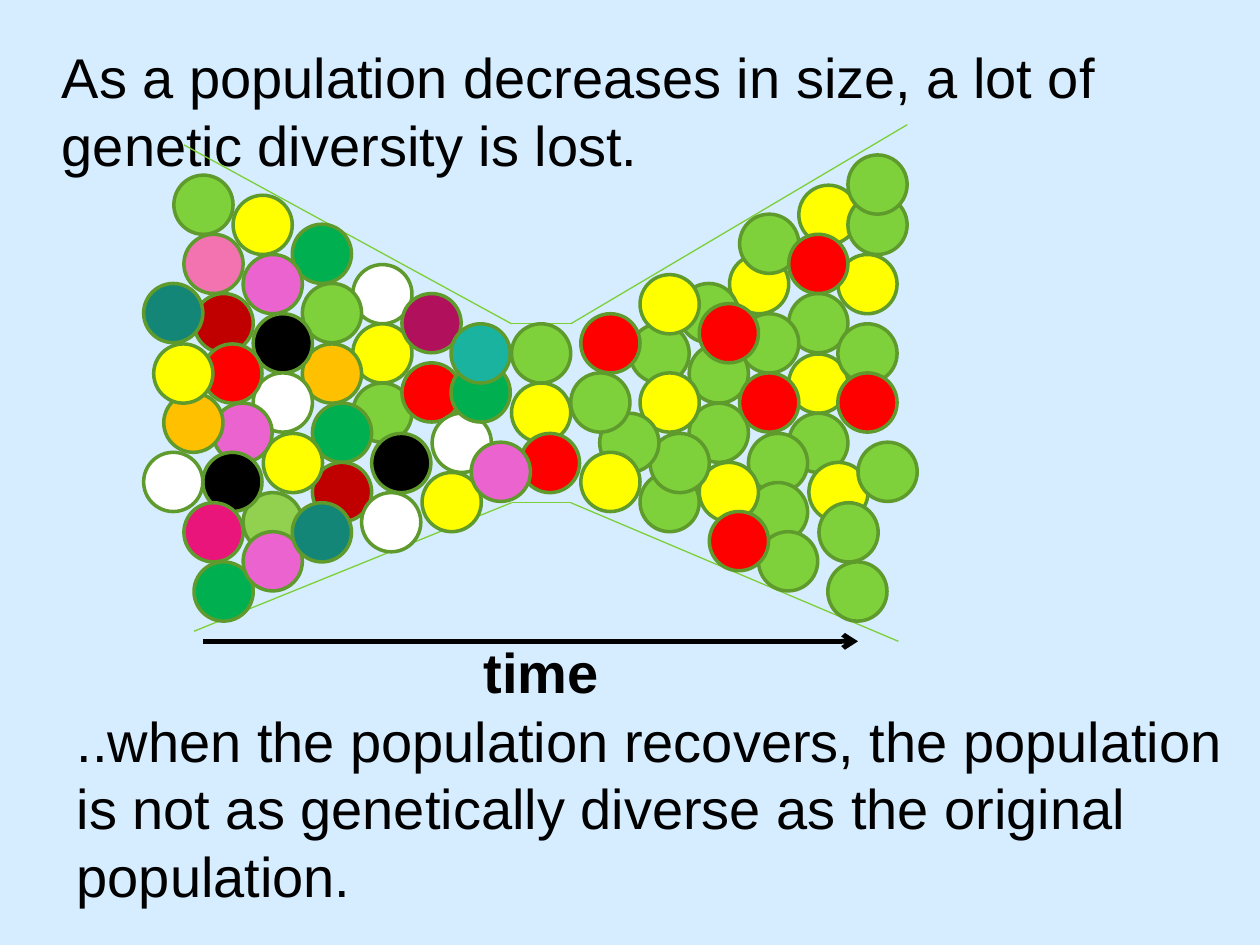
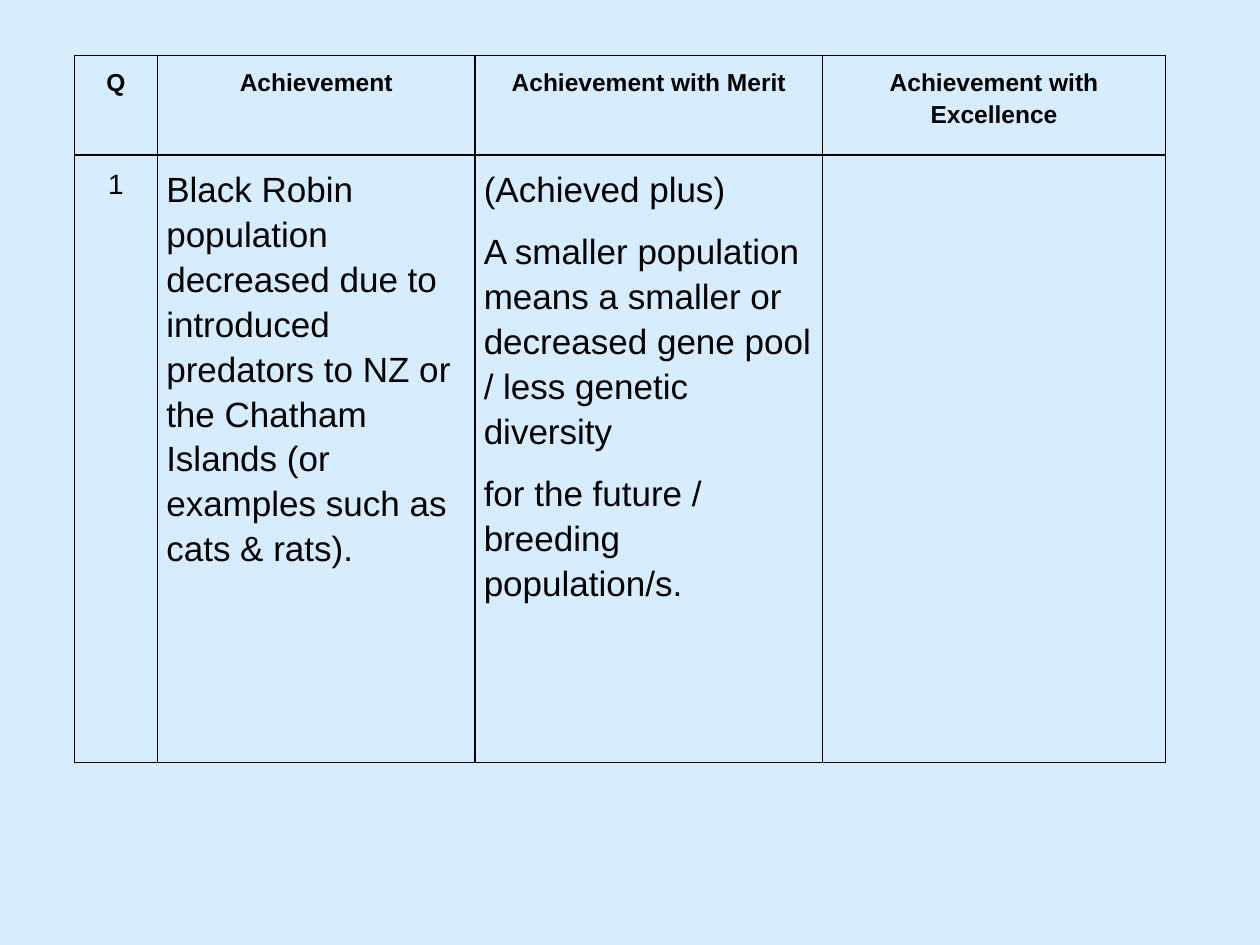
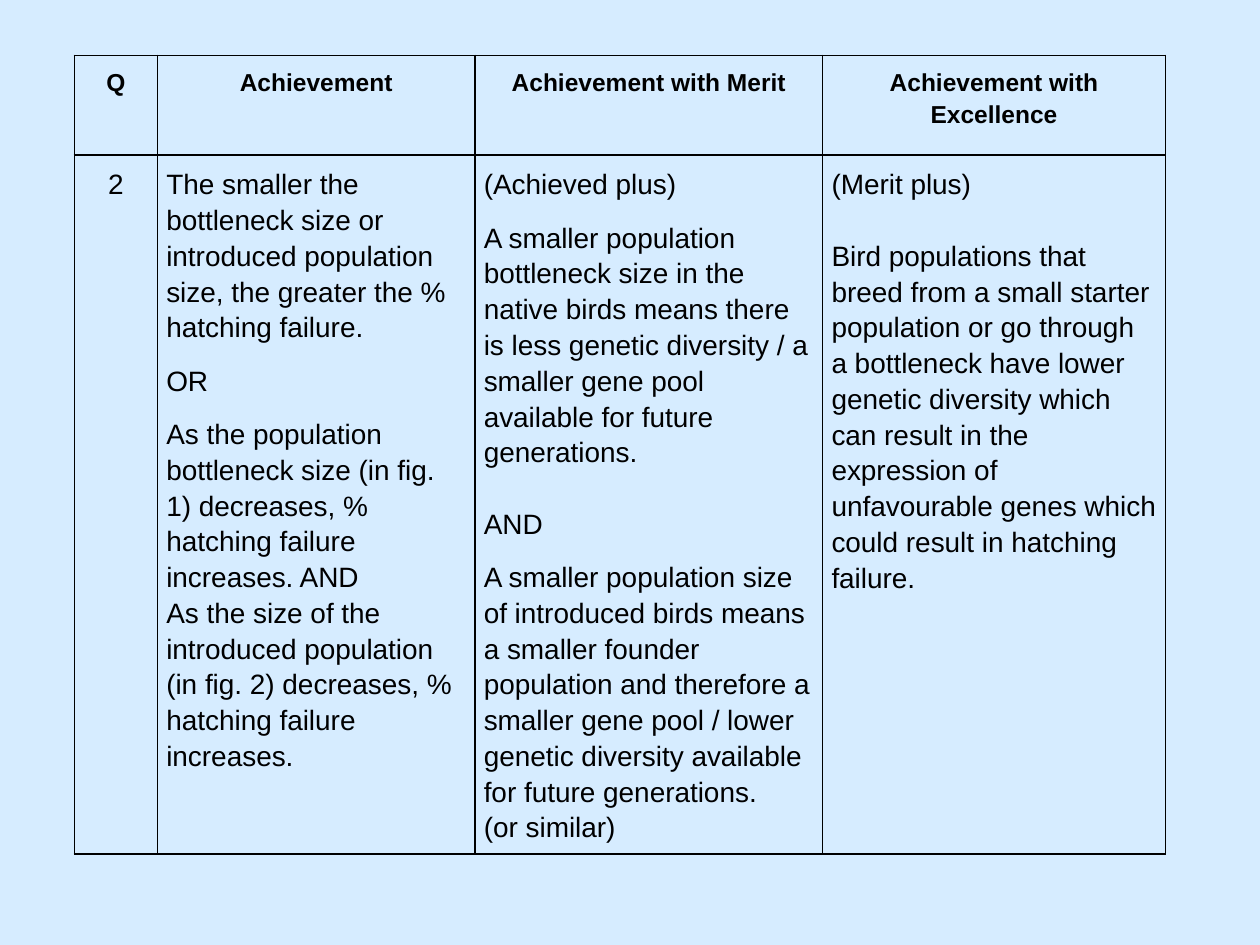
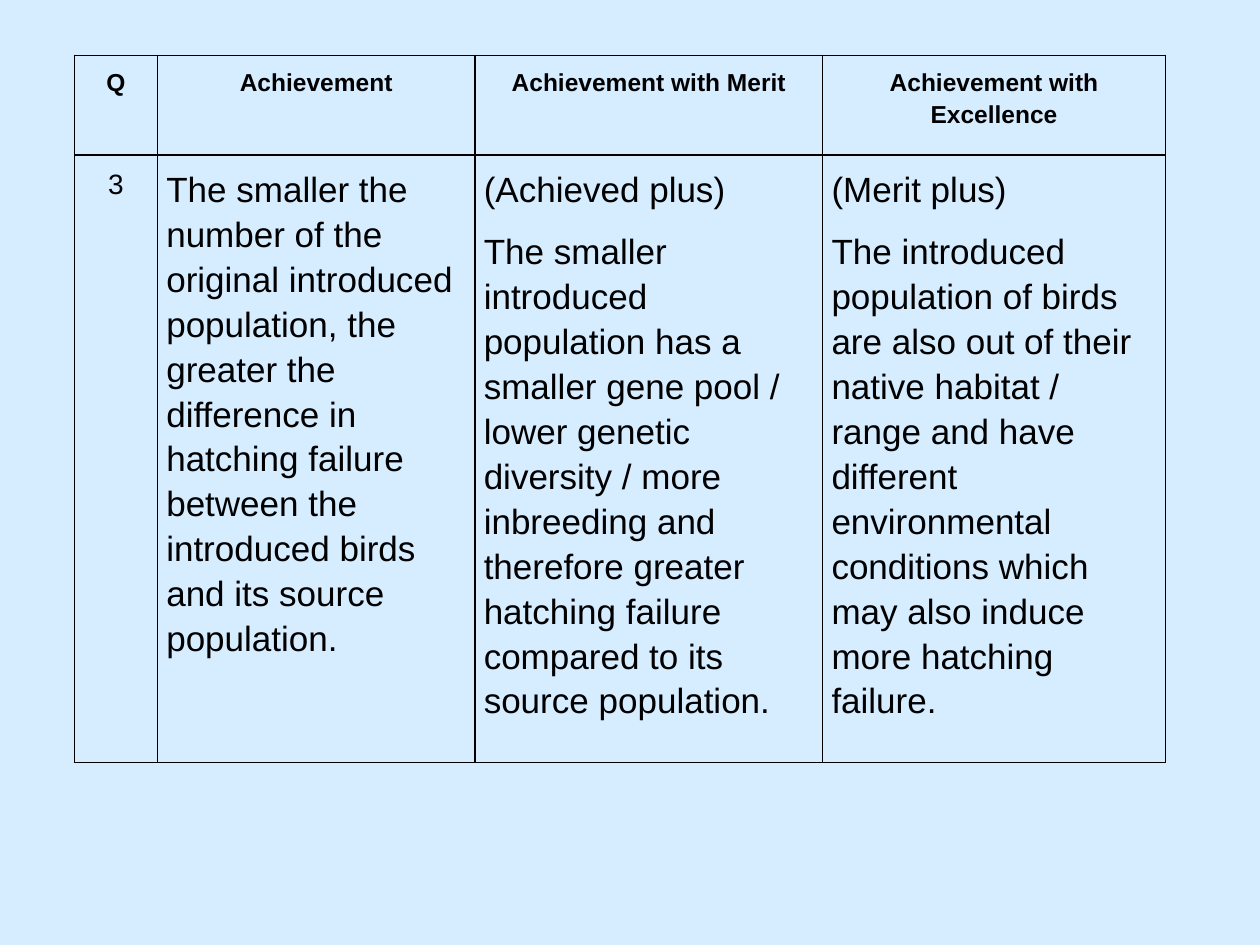
import pptx
import pptx.dml.color
import pptx.enum.shapes
import pptx.enum.text
import pptx.util
from lxml import etree
from pptx.oxml.ns import qn

Inches = pptx.util.Inches
Pt = pptx.util.Pt
ALIGN = pptx.enum.text.PP_ALIGN
SHAPE = pptx.enum.shapes.MSO_SHAPE
STRAIGHT = pptx.enum.shapes.MSO_CONNECTOR.STRAIGHT


def colour(value):
    return pptx.dml.color.RGBColor.from_string(value)


def write(para, text, size, bold=False, layout=None):
    """Fill a paragraph with black Arial text; layout holds paragraph values."""
    para.text = text
    for name, value in (layout or {}).items():
        setattr(para, name, value)
    for span in para.runs:
        for name, value in {"name": "Arial", "size": Pt(size), "bold": bold}.items():
            setattr(span.font, name, value)
        span.font.color.rgb = colour("000000")


# Shared look
deck = pptx.Presentation()
deck.slide_width, deck.slide_height = Inches(10), Inches(7.5)
background = deck.slide_master.background.fill
background.solid()
background.fore_color.rgb = colour("D6ECFF")
title_only, blank = deck.slide_layouts[5], deck.slide_layouts[6]

# Slide 1: population bottleneck
page = deck.slides.add_slide(title_only)

# Funnel outline and time arrow
upper_edge = [(1.46, 1.15), (4.06, 2.57), (4.53, 2.57), (7.2, 0.99)]
lower_edge = [(1.54, 5.01), (4.06, 3.99), (4.53, 3.99), (7.13, 5.09)]
time_axis = [(1.61, 5.09), (6.81, 5.09)]
for points, line_colour, weight in [(upper_edge, "7CD036", 0.75),
                                    (lower_edge, "7CD036", 0.75),
                                    (time_axis, "000000", 2.75)]:
    for start, end in zip(points, points[1:]):
        line = page.shapes.add_connector(STRAIGHT, *map(Inches, start + end))
        line.line.color.rgb = colour(line_colour)
        line.line.width = Pt(weight)
        properties = line._element.spPr
        etree.SubElement(properties, qn("a:effectLst"))
        if points is time_axis:
            etree.SubElement(properties.find(qn("a:ln")), qn("a:tailEnd"), type="arrow")

# Individuals, from back to front: colour, then left and top of each
GREEN, YELLOW, RED, WHITE, BLACK = "7FD13B", "FFFF00", "FF0000", "FFFFFF", "000000"
EMERALD, ORANGE, CRIMSON, ORCHID, TEAL = "00B050", "FFC000", "C00000", "EB63CE", "138677"
individuals = [
    (WHITE, [(2.8, 2.1)]),
    (YELLOW, [(2.8, 2.57)]),
    (GREEN, [(2.8, 3.04)]),
    (BLACK, [(2.95, 3.44)]),
    (RED, [(3.19, 2.88)]),
    (WHITE, [(3.43, 3.28)]),
    ("B0105C", [(3.19, 2.33)]),
    (EMERALD, [(3.58, 2.88)]),
    ("1AB39F", [(3.58, 2.57)]),
    (YELLOW, [(4.06, 3.04)]),
    (GREEN, [(4.06, 2.57)]),
    (EMERALD, [(2.32, 1.78)]),
    (GREEN, [(2.4, 2.25)]),
    (ORANGE, [(2.4, 2.73)]),
    (EMERALD, [(2.48, 3.2)]),
    (CRIMSON, [(2.48, 3.67)]),
    (BLACK, [(2.01, 2.49)]),
    (WHITE, [(2.01, 2.96)]),
    (YELLOW, [(2.09, 3.44)]),
    (CRIMSON, [(1.54, 2.33)]),
    (YELLOW, [(1.85, 1.55)]),
    (ORCHID, [(1.93, 2.02)]),
    ("92D050", [(1.93, 3.91)]),
    (RED, [(1.61, 2.73)]),
    (ORCHID, [(1.69, 3.2)]),
    (BLACK, [(1.61, 3.59)]),
    ("EA157A", [(1.46, 3.99)]),
    (TEAL, [(1.14, 2.25)]),
    (GREEN, [(1.38, 1.39)]),
    ("F273AF", [(1.46, 1.86)]),
    (WHITE, [(1.14, 3.59)]),
    (ORANGE, [(1.3, 3.12)]),
    (YELLOW, [(1.22, 2.73)]),
    (GREEN, [(6.26, 2.33)]),
    (YELLOW, [(6.26, 2.81)]),
    (GREEN, [(6.26, 3.28)]),
    (YELLOW, [(6.42, 3.67)]),
    (GREEN, [(5.08, 3.75), (6.5, 3.99), (6.65, 2.57)]),
    (YELLOW, [(5.79, 2.02)]),
    (GREEN, [(5.87, 2.49), (5.94, 3.44), (5.94, 3.83), (5.47, 2.73), (5.47, 3.2)]),
    (YELLOW, [(5.55, 3.67)]),
    (GREEN, [(5, 2.57)]),
    (YELLOW, [(6.34, 1.47)]),
    (GREEN, [(5.39, 2.25)]),
    (YELLOW, [(5.08, 2.96)]),
    (GREEN, [(5.16, 3.44), (5.87, 1.7)]),
    (YELLOW, [(5.08, 2.18), (6.65, 2.02)]),
    (GREEN, [(4.76, 3.28), (4.53, 2.96), (6.81, 3.51), (6.73, 1.55), (6.73, 1.23)]),
    (EMERALD, [(1.54, 4.46)]),
    (ORCHID, [(1.93, 4.22)]),
    (TEAL, [(2.32, 3.99)]),
    (RED, [(4.13, 3.44)]),
    (WHITE, [(2.87, 3.91)]),
    (YELLOW, [(3.35, 3.75)]),
    (ORCHID, [(3.74, 3.51)]),
    (GREEN, [(6.02, 4.22), (6.57, 4.46)]),
    (RED, [(5.63, 4.06), (5.87, 2.96), (5.55, 2.41)]),
    (YELLOW, [(4.61, 3.59)]),
    (RED, [(6.65, 2.96), (4.61, 2.49), (6.26, 1.86)]),
]
diameter = Inches(0.47)
for fill_colour, places in individuals:
    for left, top in places:
        circle = page.shapes.add_shape(SHAPE.OVAL, Inches(left), Inches(top), diameter, diameter)
        circle.shadow.inherit = False
        circle.fill.solid()
        circle.fill.fore_color.rgb = colour(fill_colour)
        circle.line.color.rgb = colour("5E9B2C")
        circle.line.width = Pt(2)

# Title, axis label and conclusion
title = page.shapes.title
axis_label = page.shapes.add_textbox(0, 0, 0, 0)
conclusion = page.shapes.add_textbox(0, 0, 0, 0)
for box, place, text, bold in [
    (title, (0.39, 0.29, 9.61, 1.18),
     "As a population decreases in size, a lot of genetic diversity is lost.", False),
    (axis_label, (3.74, 5.01, 1.5, 0.64), "time", True),
    (conclusion, (0.51, 5.56, 9.49, 1.72),
     "..when the population recovers, the population is not as genetically diverse "
     "as the original population.", False),
]:
    box.left, box.top, box.width, box.height = map(Inches, place)
    frame_format = {"word_wrap": True,
                    "auto_size": pptx.enum.text.MSO_AUTO_SIZE.NONE,
                    "vertical_anchor": pptx.enum.text.MSO_ANCHOR.TOP}
    for name, value in frame_format.items():
        setattr(box.text_frame, name, value)
    write(box.text_frame.paragraphs[0], text, 32, bold, {"alignment": ALIGN.LEFT})

# Slides 2 to 4: marking schedules, one question each
headings = ["Q", "Achievement", "Achievement with Merit", "Achievement with Excellence"]
column_widths = [0.66, 2.52, 2.76, 2.72]
row_heights = [0.79, 4.82]
normal_gap, line_gap = 10, 20.4
# Paragraphs that are followed by a gap one line high
before_wide_gap = ("available for future generations.", "(Merit plus)")

questions = [
    ("1", 20, [
        ["Black Robin population decreased due to introduced predators to NZ or the "
         "Chatham Islands (or examples such as cats & rats)."],
        ["(Achieved plus)",
         "A smaller population means a smaller or decreased gene pool / less genetic diversity",
         "for the future / breeding population/s."],
        [],
    ]),
    ("2", 16, [
        ["The smaller the bottleneck size or introduced population size, the greater the "
         "% hatching failure.",
         "OR",
         "As the population bottleneck size (in fig. 1) decreases, % hatching failure "
         "increases. AND\nAs the size of the introduced population (in fig. 2) decreases, "
         "% hatching failure increases."],
        ["(Achieved plus)",
         "A smaller population bottleneck size in the native birds means there is less "
         "genetic diversity / a smaller gene pool available for future generations.",
         "AND",
         "A smaller population size of introduced birds means a smaller founder population "
         "and therefore a smaller gene pool / lower genetic diversity available for future "
         "generations.\n(or similar)"],
        ["(Merit plus)",
         "Bird populations that breed from a small starter population or go through a "
         "bottleneck have lower genetic diversity which can result in the expression of "
         "unfavourable genes which could result in hatching failure."],
    ]),
    ("3", 20, [
        ["The smaller the number of the original introduced population, the greater the "
         "difference in hatching failure between the introduced birds and its source "
         "population."],
        ["(Achieved plus)",
         "The smaller introduced population has a smaller gene pool / lower genetic "
         "diversity / more inbreeding and therefore greater hatching failure compared to "
         "its source population."],
        ["(Merit plus)",
         "The introduced population of birds are also out of their native habitat / range "
         "and have different environmental conditions which may also induce more hatching "
         "failure."],
    ]),
]

for number, answer_size, answers in questions:
    page = deck.slides.add_slide(blank)
    table = page.shapes.add_table(2, 4, Inches(0.59), Inches(0.44), Inches(sum(column_widths)),
                                  Inches(sum(row_heights))).table
    table.first_row = table.horz_banding = False
    for column, width in zip(table.columns, column_widths):
        column.width = Inches(width)
    for row, height in zip(table.rows, row_heights):
        row.height = Inches(height)

    rows = [[[heading] for heading in headings], [[number]] + answers]
    for row_index, row in enumerate(rows):
        for column_index, texts in enumerate(row):
            cell = table.cell(row_index, column_index)
            cell.margin_left = cell.margin_right = Inches(0.07)
            cell.margin_top = cell.margin_bottom = Inches(0.08)

            # Thin black border on every side, no fill
            for side in ("lnL", "lnR", "lnT", "lnB"):
                border = etree.SubElement(cell._tc.get_or_add_tcPr(), qn("a:" + side),
                                          w=str(Pt(1)))
                paint = etree.SubElement(border, qn("a:solidFill"))
                etree.SubElement(paint, qn("a:srgbClr"), val="000000")
            cell.fill.background()

            heading_row = row_index == 0
            centred = heading_row or column_index == 0
            size = 14 if heading_row else 16 if centred else answer_size
            for index, text in enumerate(texts):
                frame = cell.text_frame
                para = frame.add_paragraph() if index else frame.paragraphs[0]
                wide = number == "2" and text.endswith(before_wide_gap)
                write(para, text, size, heading_row, {
                    "alignment": ALIGN.CENTER if centred else ALIGN.LEFT,
                    "line_spacing": 1.15,
                    "space_after": Pt(line_gap if wide else normal_gap),
                })

deck.save("out.pptx")
